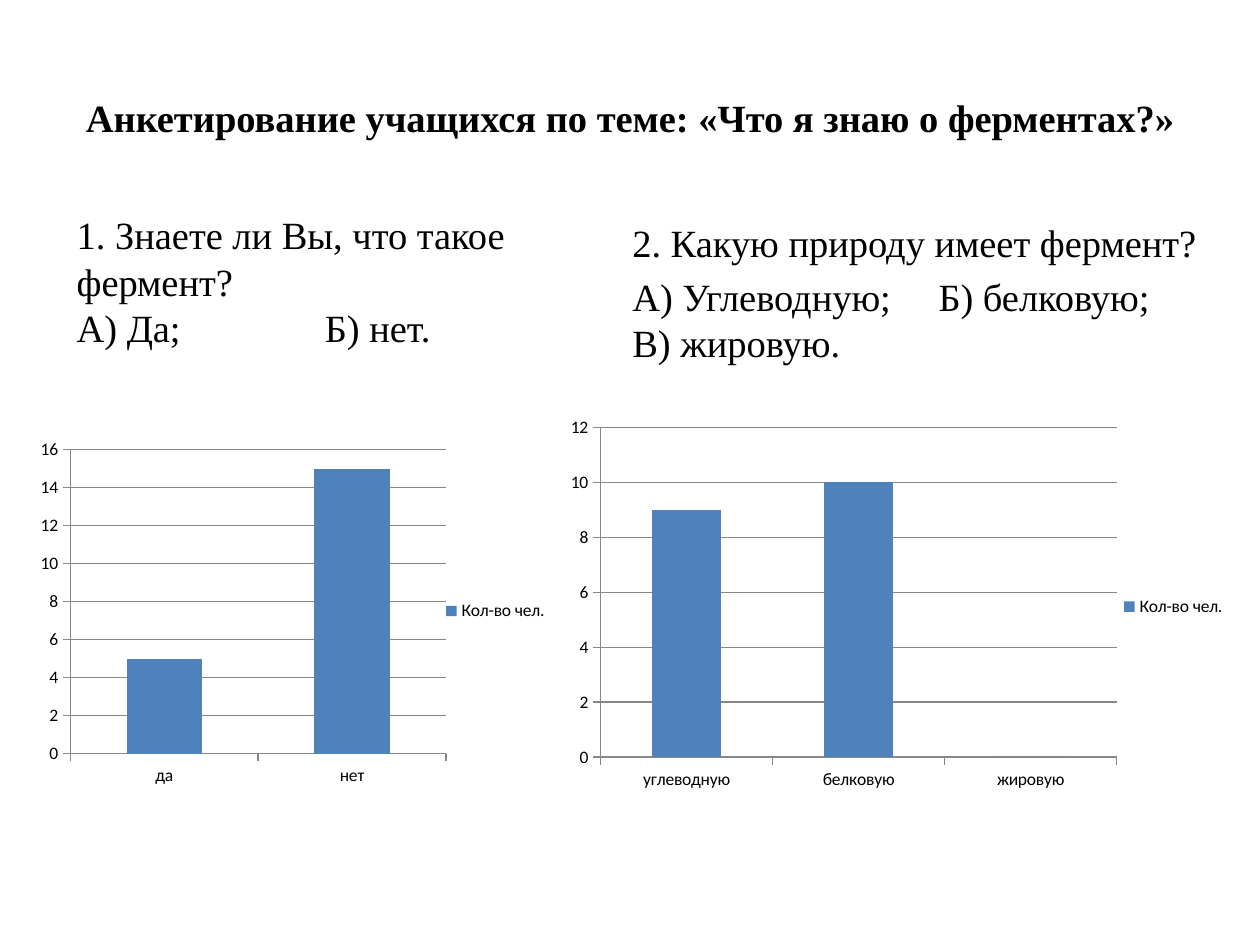
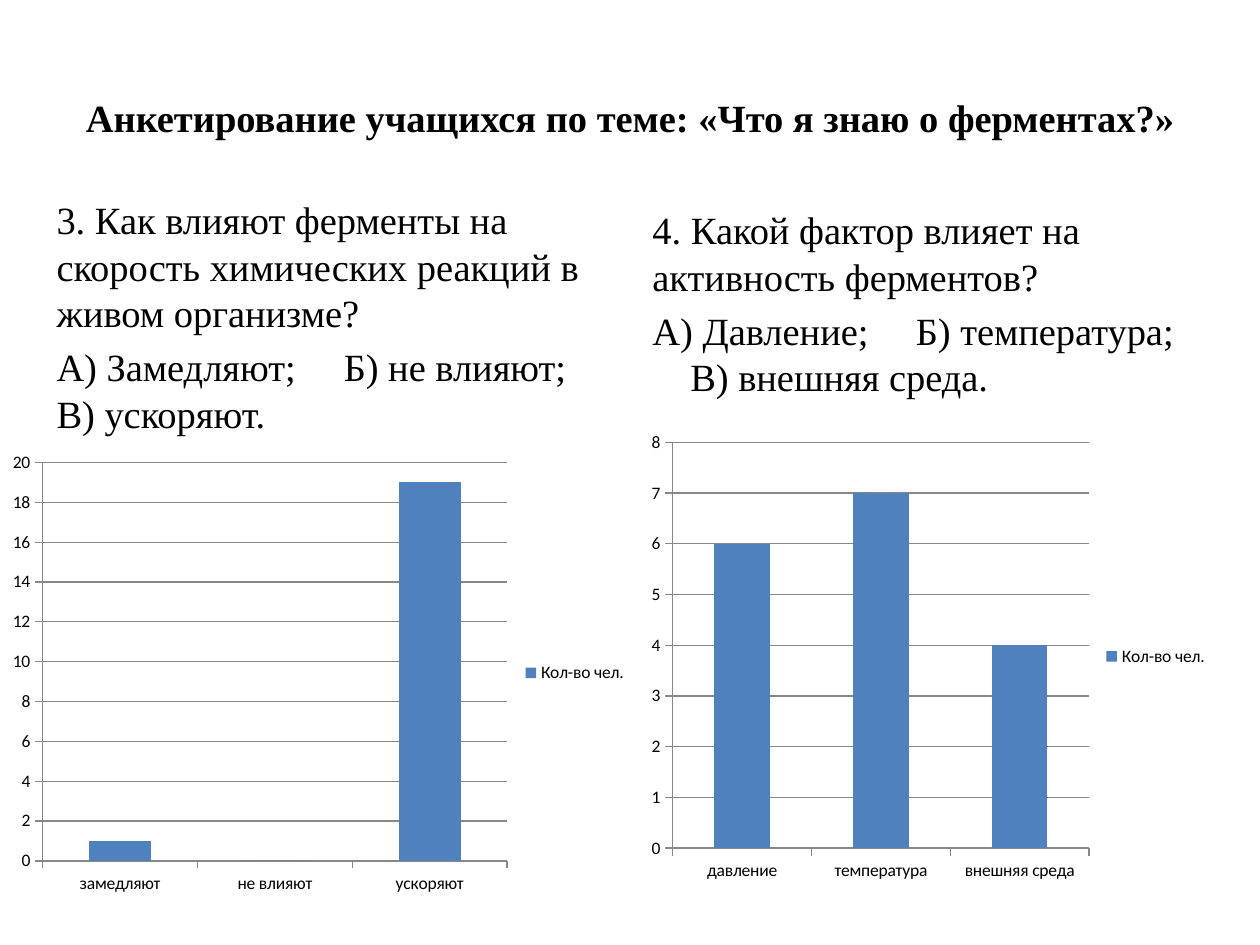
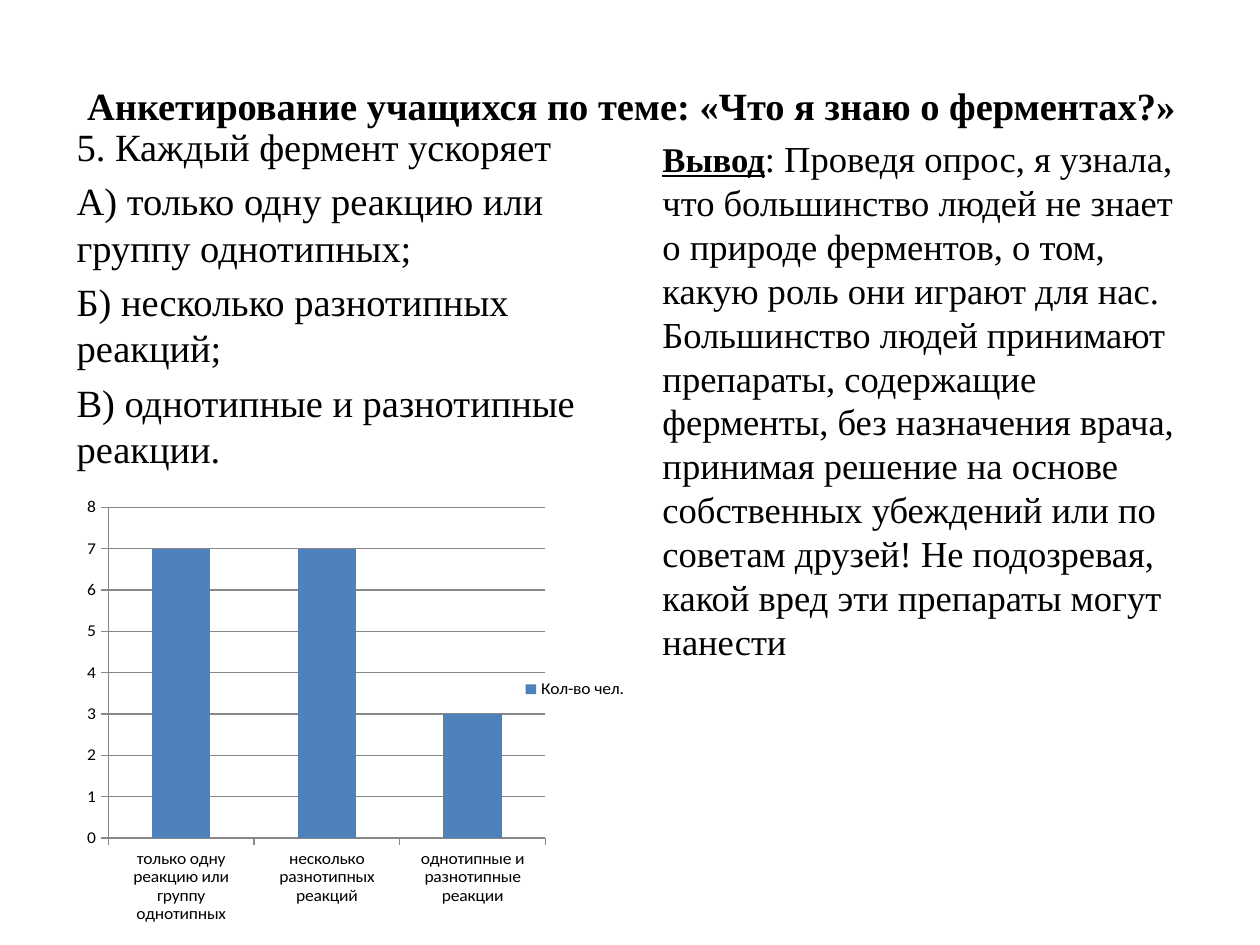
from lxml.etree import SubElement
from pptx import Presentation
from pptx.chart.data import CategoryChartData
from pptx.dml.color import RGBColor
from pptx.enum.chart import XL_CHART_TYPE, XL_LEGEND_POSITION, XL_TICK_MARK
from pptx.enum.text import MSO_ANCHOR, PP_ALIGN
from pptx.oxml import parse_xml
from pptx.oxml.ns import nsdecls, qn
from pptx.util import Inches, Pt

COLORS = {"text": "000000", "bar": "4F81BD", "grid": "878787"}
TEXT_FONT = "Times New Roman"
CHART_FONT = "Calibri"
TITLE = "Анкетирование учащихся по теме: «Что я знаю о ферментах?»"
SERIES = "Кол-во чел."


def add_text(s, paragraphs, at, size=22, line=26.6, bold=False, lead="",
             align=PP_ALIGN.LEFT, anchor=MSO_ANCHOR.BOTTOM, tabs=()):
    tf = s.shapes.add_textbox(*map(Inches, at)).text_frame
    tf.word_wrap = True
    tf.vertical_anchor = anchor
    for i, text in enumerate(paragraphs):
        p = tf.paragraphs[0] if i == 0 else tf.add_paragraph()
        p.text = text
        p.alignment = align
        p.line_spacing = Pt(line)
        p.space_before = Pt(size * 0.2 if i else 0)
        for r in p.runs:
            r.font.name = TEXT_FONT
            r.font.size = Pt(size)
            r.font.bold = bold
            r.font.color.rgb = RGBColor.from_string(COLORS["text"])
        if tabs:
            tab_list = SubElement(p._p.get_or_add_pPr(), qn("a:tabLst"))
            for pos in tabs:
                SubElement(tab_list, qn("a:tab"), pos=str(Inches(pos)), algn="l")
    if lead:
        r = tf.paragraphs[0].runs[0]
        r.text = lead
        r.font.size = Pt(19.8)
        r.font.bold = r.font.underline = True


def add_bar_chart(s, values, at, top, step, plot=None):
    data = CategoryChartData()
    data.categories = list(values)
    data.add_series(SERIES, list(values.values()))
    chart = s.shapes.add_chart(
        XL_CHART_TYPE.COLUMN_CLUSTERED, *map(Inches, at), data).chart
    chart.has_title = False
    chart.font.name = CHART_FONT
    chart.font.size = Pt(10)
    chart.font.color.rgb = RGBColor.from_string(COLORS["text"])
    chart.has_legend = True
    chart.legend.position = XL_LEGEND_POSITION.RIGHT
    chart.legend.include_in_layout = False
    bars = chart.plots[0]
    bars.gap_width = 150
    bars.vary_by_categories = False
    fill = bars.series[0].format.fill
    fill.solid()
    fill.fore_color.rgb = RGBColor.from_string(COLORS["bar"])
    axis = chart.value_axis
    axis.minimum_scale, axis.maximum_scale, axis.major_unit = 0, top, step
    axis.has_major_gridlines = True
    for ax in (axis, chart.category_axis):
        ax.major_tick_mark = XL_TICK_MARK.OUTSIDE
    for lined in (axis, chart.category_axis, axis.major_gridlines):
        lined.format.line.color.rgb = RGBColor.from_string(COLORS["grid"])
        lined.format.line.width = Pt(0.75)
    if plot:
        area = chart._chartSpace.find(".//" + qn("c:plotArea"))
        for old in area.findall(qn("c:layout")):
            area.remove(old)
        sizes = "".join(f'<c:{k} val="{v}"/>' for k, v in zip("xywh", plot))
        area.insert(0, parse_xml(
            f'<c:layout {nsdecls("c")}><c:manualLayout><c:layoutTarget val="inner"/>'
            f'<c:xMode val="edge"/><c:yMode val="edge"/>{sizes}'
            '</c:manualLayout></c:layout>'))


prs = Presentation()
prs.slide_width, prs.slide_height = Inches(10), Inches(7.5)

slides = []
for left, top in [(0.5, 0.3), (0.5, 0.3), (0.51, 0.21)]:
    s = prs.slides.add_slide(prs.slide_layouts[6])
    add_text(s, [TITLE], (left, top, 9, 1.25), bold=True,
             align=PP_ALIGN.CENTER, anchor=MSO_ANCHOR.MIDDLE)
    slides.append(s)

s = slides[0]
add_text(s, ["1. Знаете ли Вы, что такое фермент?\vА) Да;\tБ) нет."],
         (0.51, 1.63, 4.42, 1.2), tabs=[1.97])
add_text(s, ["2. Какую природу имеет фермент?",
             "А) Углеводную;\tБ) белковую;\vВ) жировую."],
         (4.92, 1.65, 4.88, 1.3), tabs=[2.43])
add_bar_chart(s, {"да": 5, "нет": 15}, (0.31, 3.36, 4.14, 2.98), 16, 2,
              plot=(0.06, 0.07, 0.72, 0.81))
add_bar_chart(s, {"углеводную": 9, "белковую": 10, "жировую": 0},
              (4.14, 3.2, 5.69, 3.23), 12, 2, plot=(0.11, 0.06, 0.72, 0.81))

s = slides[1]
add_text(s, ["3. Как влияют ферменты на скорость химических реакций в живом организме?",
             "А) Замедляют;\tБ) не влияют;\vВ) ускоряют."],
         (0.35, 1.51, 4.65, 2), tabs=[2.28])
add_text(s, ["4. Какой фактор влияет на активность ферментов?",
             "А) Давление;\tБ) температура;\v\tВ) внешняя среда."],
         (5.08, 1.62, 4.42, 1.6), tabs=[0.3, 2.09])
add_bar_chart(s, {"давление": 6, "температура": 7, "внешняя среда": 4},
              (5.08, 3.36, 4.61, 3.7), 8, 1)
add_bar_chart(s, {"замедляют": 1, "не влияют": 0, "ускоряют": 19},
              (0, 3.52, 5.08, 3.64), 20, 2)

s = slides[2]
add_text(s, ["5. Каждый фермент ускоряет",
             "А) только одну реакцию или группу однотипных;",
             "Б) несколько разнотипных реакций;",
             "В) однотипные и разнотипные реакции."],
         (0.51, 0.99, 4.72, 2.8))
add_bar_chart(s, {"только одну реакцию или группу однотипных": 7,
                  "несколько разнотипных реакций": 7,
                  "однотипные и разнотипные реакции": 3},
              (0.39, 3.83, 4.69, 3.5), 8, 1, plot=(0.1, 0.06, 0.74, 0.8))

s = slides[2]
conclusion = (
    ": Проведя опрос, я узнала, что большинство людей не знает о природе ферментов, "
    "о том, какую роль они играют для нас. Большинство людей принимают препараты, "
    "содержащие ферменты, без назначения врача, принимая решение на основе собственных "
    "убеждений или по советам друзей! Не подозревая, какой вред эти препараты могут нанести")
add_text(s, [conclusion], (5.16, 1.01, 4.34, 4.3), size=20.9, line=25.1)
p = s.shapes[-1].text_frame.paragraphs[0]
r = p.add_run()
r.text = "Вывод"
r.font.name = TEXT_FONT
r.font.size = Pt(19.8)
r.font.bold = r.font.underline = True
r.font.color.rgb = RGBColor.from_string(COLORS["text"])
p.runs[0]._r.addprevious(r._r)

prs.save("out.pptx")
